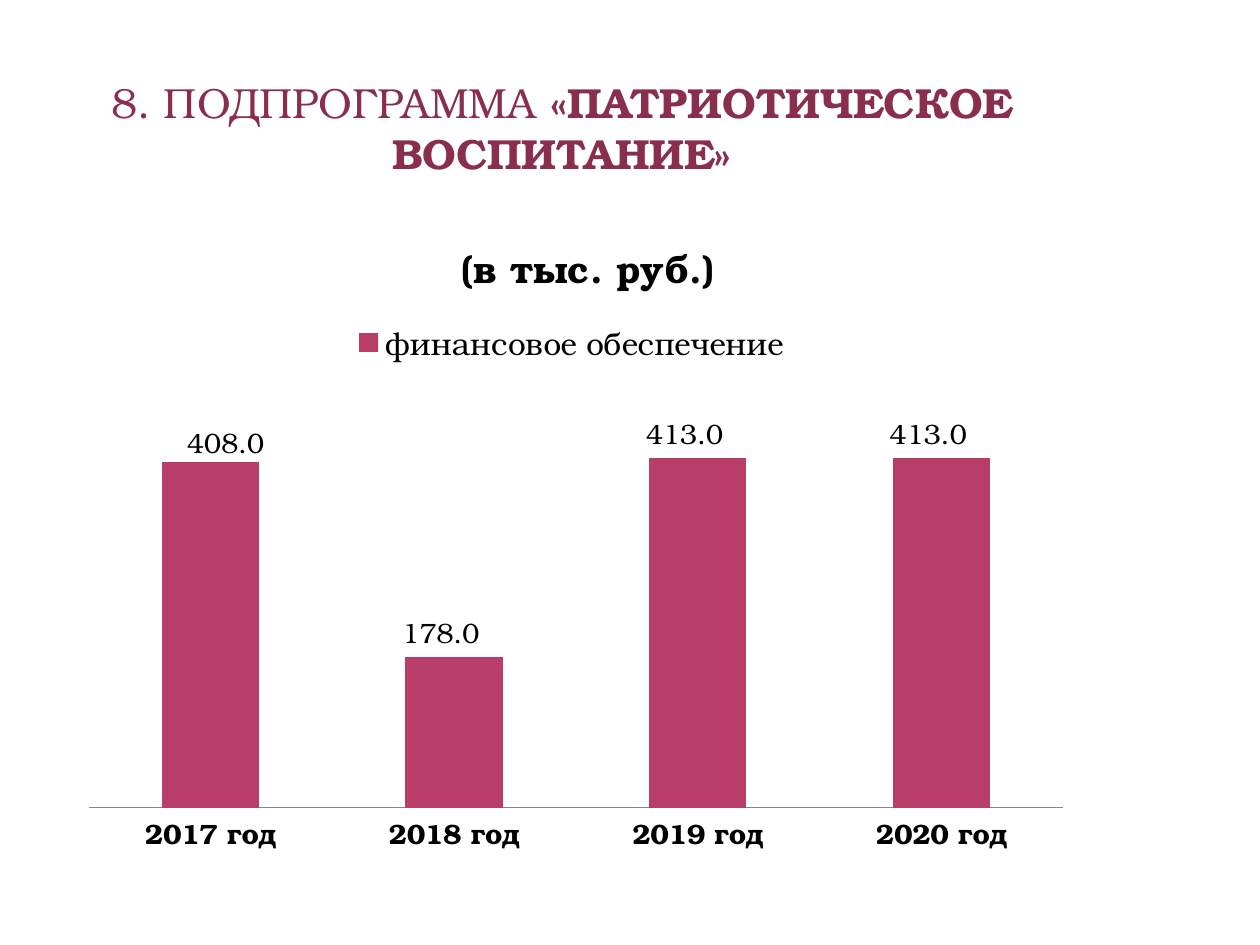
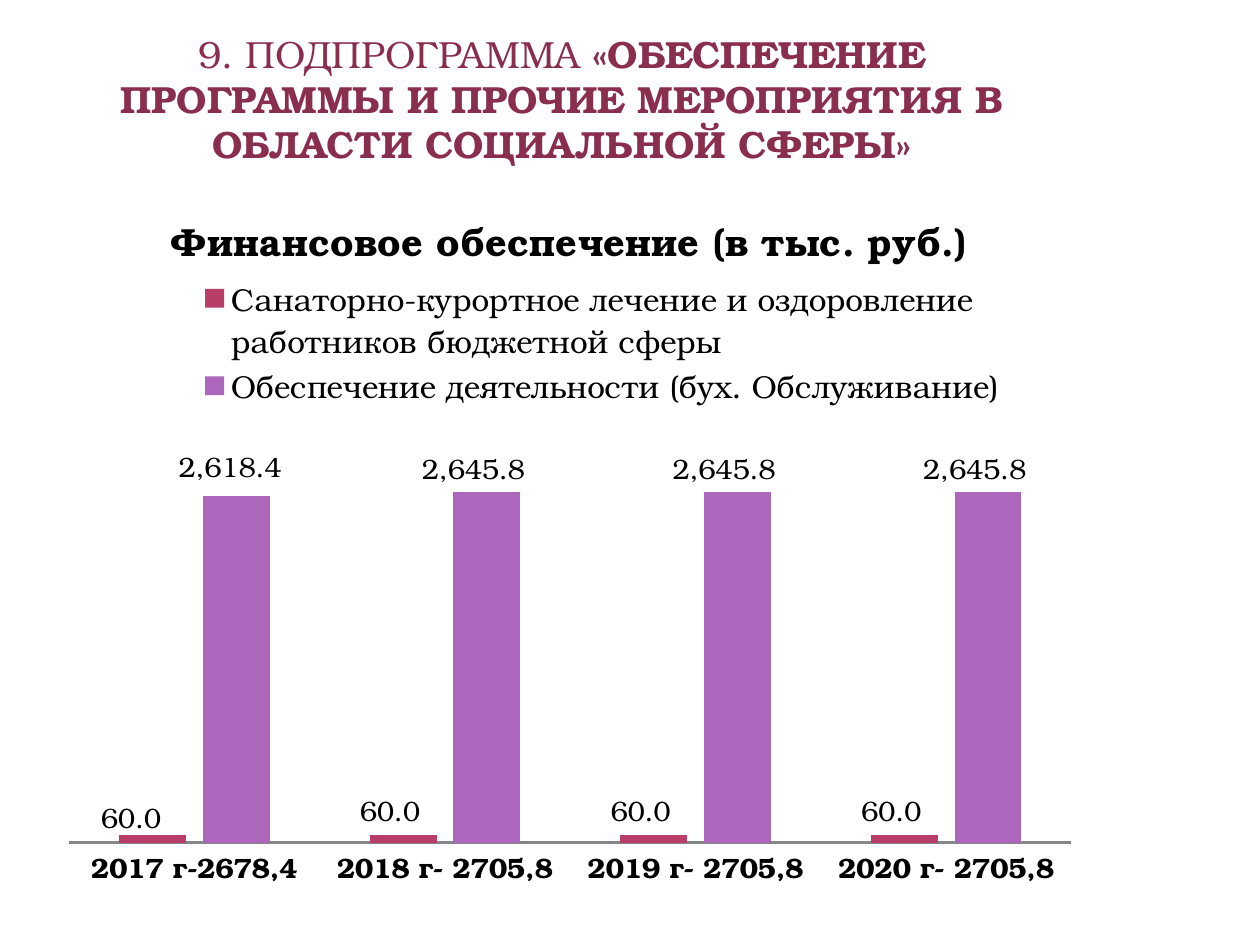
import pptx
import pptx.chart.data
import pptx.dml.color
import pptx.enum.chart
import pptx.enum.text
import pptx.util
from pptx.oxml import parse_xml
from pptx.oxml.ns import nsdecls

FONT = "TeX Gyre Bonum"
PLUM, BLACK, AXIS_GREY = "8A2E4E", "000000", "868686"
SERIES_COLOURS = ("B83D68", "AC66BB")
NUMBER_FORMAT = r'_-* #,##0.0\ _₽_-;\-* #,##0.0\ _₽_-;_-* "-"??\ _₽_-;_-@_-'

# Boxes are left, top, width, height: inches for slide parts,
# shares of the chart for the parts inside it.
PROGRAMMES = [
    {
        "heading": ("8. ПОДПРОГРАММА", " «ПАТРИОТИЧЕСКОЕ ВОСПИТАНИЕ»"),
        "heading_size": 24,
        "heading_box": (0.5, 0.35, 7.92, 1.06),
        "chart_box": (0.55, 1.48, 8.05, 5.63),
        "chart_title": "(в тыс. руб.)",
        "title_at": (0.38, 0.06),
        "legend_box": (0.27, 0.18, 0.45, 0.08),
        "plot_box": (0.019, 0.338, 0.961, 0.538),
        "years": ["2017 год", "2018 год", "2019 год", "2020 год"],
        "funding": [("финансовое обеспечение", (408, 178, 413, 413))],
        "first_label_shifts": [(0.028, 0.006)],
        "axis_top": 450,
        "axis_width": 0.75,
    },
    {
        "heading": ("9. ПОДПРОГРАММА ",
                    "«ОБЕСПЕЧЕНИЕ ПРОГРАММЫ И ПРОЧИЕ МЕРОПРИЯТИЯ В "
                    "ОБЛАСТИ СОЦИАЛЬНОЙ СФЕРЫ»"),
        "heading_size": 21.6,
        "heading_box": (0.5, 0.23, 7.92, 1.09),
        "chart_box": (0.39, 1.33, 8.28, 6.02),
        "chart_title": "Финансовое обеспечение (в тыс. руб.)",
        "title_at": (0.11, 0.045),
        "legend_box": (0.14, 0.14, 0.78, 0.18),
        "plot_box": (0.019, 0.366, 0.961, 0.524),
        "years": ["2017 г-2678,4", "2018 г- 2705,8",
                  "2019 г- 2705,8", "2020 г- 2705,8"],
        "funding": [
            ("Санаторно-курортное лечение и оздоровление "
             "работников бюджетной сферы", (60, 60, 60, 60)),
            ("Обеспечение деятельности (бух. Обслуживание)",
             (2618.4, 2645.8, 2645.8, 2645.8)),
        ],
        "first_label_shifts": [(-0.008, 0.009), (0.007, -0.007)],
        "axis_top": 3000,
        "axis_width": 1.5,
    },
]


def colour(hex_code):
    return pptx.dml.color.RGBColor.from_string(hex_code)


def inches(box):
    return [pptx.util.Inches(length) for length in box]


def style_font(font, size, bold=False, ink=BLACK):
    font.name, font.size, font.bold = FONT, pptx.util.Pt(size), bold
    font.color.rgb = colour(ink)


def add_text(paragraph, text, **font_format):
    run = paragraph.add_run()
    run.text = text
    style_font(run.font, **font_format)


def layout_xml(box, edge_modes=True, inner=False):
    """Manual chart layout; without edge modes x and y are shifts."""
    parts = [("layoutTarget", "inner")] if inner else []
    if edge_modes:
        parts += [("xMode", "edge"), ("yMode", "edge")]
    parts += zip("xywh", box)
    body = "".join(f'<c:{tag} val="{value}"/>' for tag, value in parts)
    return parse_xml(f'<c:layout {nsdecls("c")}><c:manualLayout>{body}'
                     '</c:manualLayout></c:layout>')


def place(element, layout, after=None):
    """Put a layout into a chart part, behind the named child if given."""
    for old in element.xpath("./c:layout"):
        element.remove(old)
    if after:
        element.xpath(f"./c:{after}")[0].addnext(layout)
    else:
        element.insert(0, layout)


def add_heading(slide, programme):
    frame = slide.shapes.add_textbox(*inches(programme["heading_box"])).text_frame
    frame.word_wrap = True
    frame.vertical_anchor = pptx.enum.text.MSO_ANCHOR.BOTTOM
    frame.margin_left = frame.margin_right = pptx.util.Inches(0.05)
    frame.margin_top = frame.margin_bottom = 0
    line = frame.paragraphs[0]
    line.alignment = pptx.enum.text.PP_ALIGN.CENTER
    for text, bold in zip(programme["heading"], (False, True)):
        add_text(line, text, size=programme["heading_size"], bold=bold, ink=PLUM)


def style_series(series, ink, first_label_shift):
    series.format.fill.solid()
    series.format.fill.fore_color.rgb = colour(ink)
    outside = pptx.enum.chart.XL_LABEL_POSITION.OUTSIDE_END
    labels = series.data_labels
    labels.show_value = True
    labels.number_format, labels.number_format_is_linked = NUMBER_FORMAT, False
    labels.position = outside
    style_font(labels.font, 16)

    first = series.points[0].data_label
    style_font(first.font, 16)
    first.position = outside
    element = series._element.xpath(".//c:dLbl")[0]
    place(element, layout_xml(first_label_shift, edge_modes=False), "idx")
    number_format = parse_xml(f'<c:numFmt {nsdecls("c")} sourceLinked="0"/>')
    number_format.set("formatCode", NUMBER_FORMAT)
    element.xpath("./c:layout")[0].addnext(number_format)


def add_funding_chart(slide, programme):
    data = pptx.chart.data.CategoryChartData(number_format=NUMBER_FORMAT)
    data.categories = programme["years"]
    for name, values in programme["funding"]:
        data.add_series(name, values)
    chart = slide.shapes.add_chart(
        pptx.enum.chart.XL_CHART_TYPE.COLUMN_CLUSTERED,
        *inches(programme["chart_box"]), data).chart
    style_font(chart.font, 18)

    chart.has_title = True
    add_text(chart.chart_title.text_frame.paragraphs[0],
             programme["chart_title"], size=21.6, bold=True)
    place(chart.chart_title._element, layout_xml(programme["title_at"]), "tx")

    chart.has_legend = True
    chart.legend.position = pptx.enum.chart.XL_LEGEND_POSITION.TOP
    chart.legend.include_in_layout = False
    style_font(chart.legend.font, 18)
    place(chart.legend._element, layout_xml(programme["legend_box"]), "legendPos")

    years, amounts = chart.category_axis, chart.value_axis
    years.major_tick_mark = pptx.enum.chart.XL_TICK_MARK.NONE
    style_font(years.tick_labels.font, 16, bold=True)
    years.format.line.color.rgb = colour(AXIS_GREY)
    years.format.line.width = pptx.util.Pt(programme["axis_width"])
    amounts.has_major_gridlines = False
    amounts.visible = False
    amounts.minimum_scale, amounts.maximum_scale = 0, programme["axis_top"]

    plot = chart.plots[0]
    plot.gap_width, plot.overlap, plot.vary_by_categories = 150, -25, False
    for series, ink, shift in zip(plot.series, SERIES_COLOURS,
                                  programme["first_label_shifts"]):
        style_series(series, ink, shift)
    place(chart._chartSpace.xpath(".//c:plotArea")[0],
          layout_xml(programme["plot_box"], inner=True))


def main():
    deck = pptx.Presentation()
    deck.slide_width, deck.slide_height = inches((10, 7.5))
    for programme in PROGRAMMES:
        slide = deck.slides.add_slide(deck.slide_layouts[6])
        add_heading(slide, programme)
        add_funding_chart(slide, programme)
    deck.save("out.pptx")


if __name__ == "__main__":
    main()
